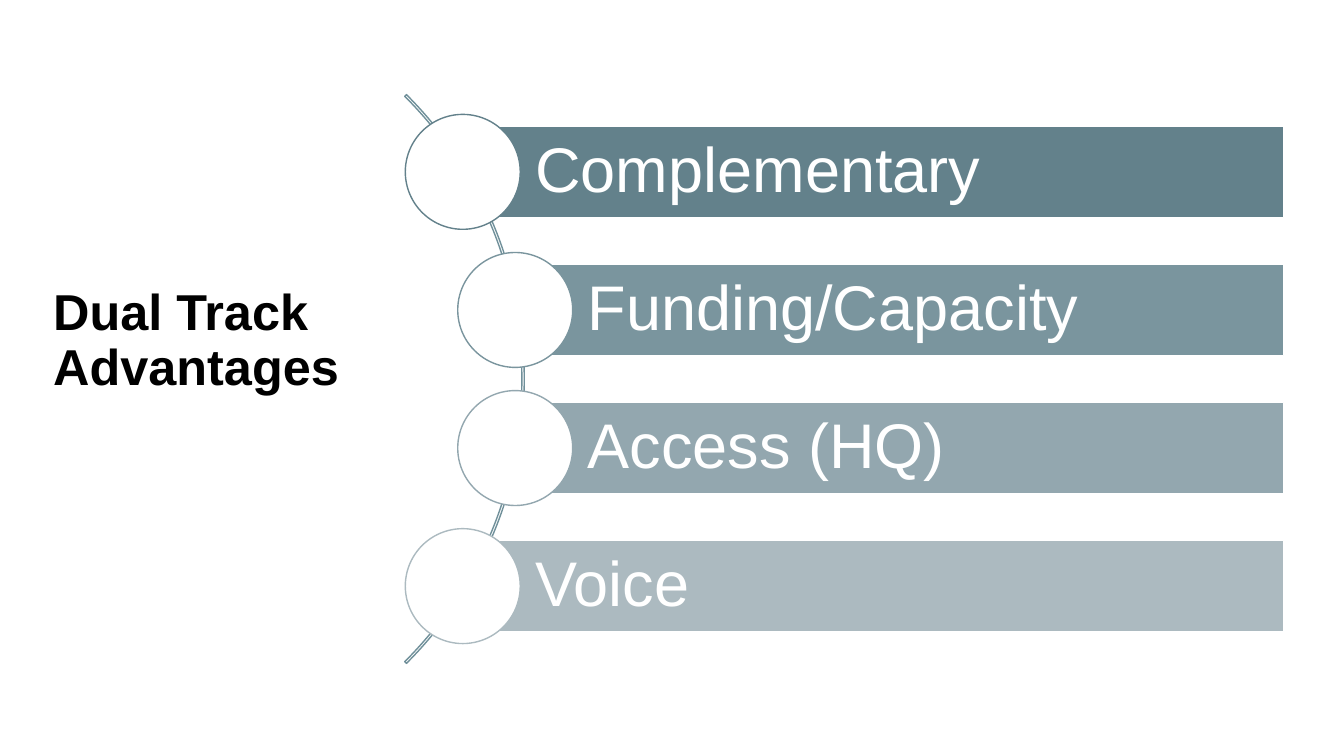
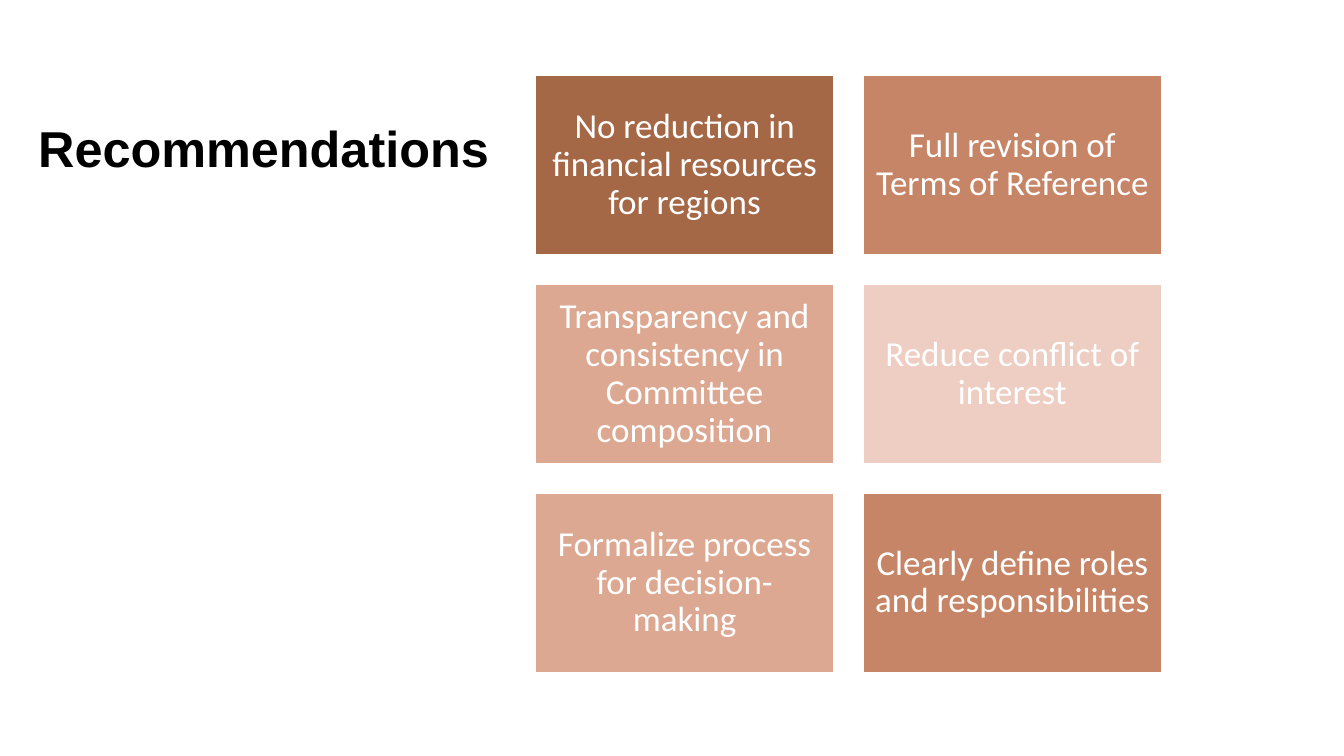
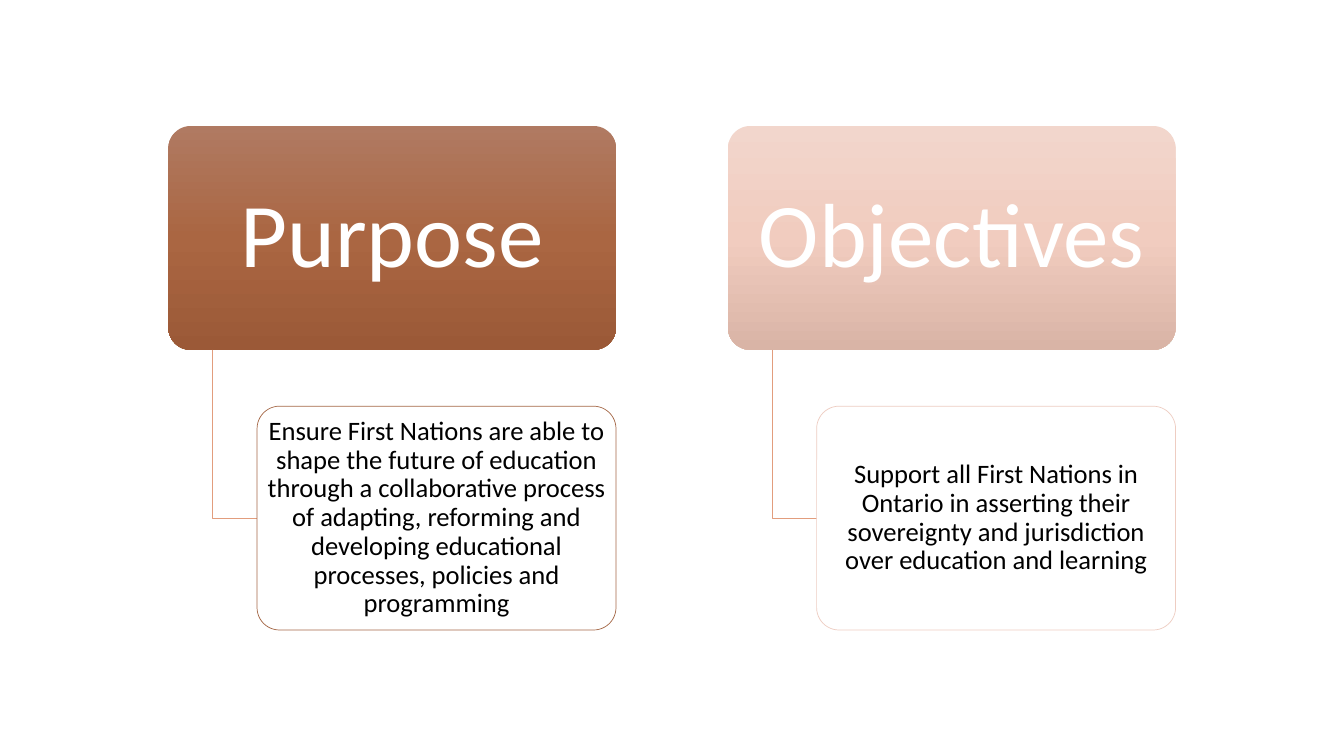
from copy import deepcopy
from dataclasses import dataclass

from pptx import Presentation
from pptx.dml.color import RGBColor
from pptx.enum.shapes import MSO_SHAPE
from pptx.enum.text import MSO_ANCHOR, PP_ALIGN
from pptx.oxml.ns import qn
from pptx.util import Inches, Pt

RECT = MSO_SHAPE.RECTANGLE
ROUND = MSO_SHAPE.ROUNDED_RECTANGLE
OVAL = MSO_SHAPE.OVAL
ARC = MSO_SHAPE.BLOCK_ARC
LEFT, MID = PP_ALIGN.LEFT, PP_ALIGN.CENTER
TOP, HALF = MSO_ANCHOR.TOP, MSO_ANCHOR.MIDDLE


@dataclass(frozen=True)
class Theme:
    white: str = "FFFFFF"
    black: str = "000000"
    arc: str = "70909A"
    slate: tuple = ("63818B", "7A959E", "93A7AF", "ACBAC0")
    clay: tuple = ("A56847", "C68567", "DCA892", "EECDC2")
    dark: tuple = ("B07A62", "AA6642", "9B5937")
    pale: tuple = ("F2D6CC", "F1CCBF", "D9B4A6")
    link: str = "E29D7D"
    sans: str = "Arial"
    body: str = "Calibri"
    title: int = 36
    bar: int = 45
    tile: int = 25
    head: int = 65
    note: int = 19
    space: float = 0.9


class Deck:
    """Holds the theme and the slide being drawn."""

    def __init__(self, theme):
        self.theme = theme
        self.prs = Presentation()
        self.prs.slide_width = Inches(13.33)
        self.prs.slide_height = Inches(7.5)
        self.slide = None

    def page(self):
        self.slide = self.prs.slides.add_slide(self.prs.slide_layouts[6])

    def label(self, shape, text, size, font, color, align=MID, anchor=HALF,
              pad=(0.1, 0.1, 0.1, 0.1), bold=False):
        """Set text in a shape; pad is left, top, right, bottom."""
        frame = shape.text_frame
        frame.word_wrap = True
        frame.vertical_anchor = anchor
        (frame.margin_left, frame.margin_top,
         frame.margin_right, frame.margin_bottom) = map(Inches, pad)
        frame.text = text
        para = frame.paragraphs[0]
        para.alignment = align
        para.line_spacing = self.theme.space
        face = para.runs[0].font
        face.name, face.size, face.bold = font, Pt(size), bold
        face.color.rgb = RGBColor.from_string(color)

    def title(self, text, *box):
        shape = self.slide.shapes.add_textbox(*map(Inches, box))
        self.label(shape, text, self.theme.title, self.theme.sans,
                   self.theme.black, LEFT, TOP, (0.1, 0.05, 0.1, 0.05), True)

    def stroke(self, shape, color, width):
        shape.shadow.inherit = False
        if color:
            shape.line.color.rgb = RGBColor.from_string(color)
            shape.line.width = Pt(width)
        else:
            shape.line.fill.background()

    def shape(self, kind, box, fill=None, line=None, width=1):
        item = self.slide.shapes.add_shape(kind, *map(Inches, box))
        if fill:
            item.fill.solid()
            item.fill.fore_color.rgb = RGBColor.from_string(fill)
        else:
            item.fill.background()
        self.stroke(item, line, width)
        return item

    def blend(self, shape, colors):
        """Fill from top to bottom with three colours."""
        shape.fill.gradient()
        shape.fill.gradient_angle = 270
        first = next(shape._element.iter(qn("a:gs")))
        first.addnext(deepcopy(first))
        for i, (stop, color) in enumerate(zip(shape.fill.gradient_stops, colors)):
            stop.position = i / 2
            stop.color.rgb = RGBColor.from_string(color)

    def elbow(self, *points):
        spots = [(Inches(x), Inches(y)) for x, y in points]
        pen = self.slide.shapes.build_freeform(*spots[0])
        pen.add_line_segments(spots[1:], close=False)
        item = pen.convert_to_shape()
        item.fill.background()
        self.stroke(item, self.theme.link, 0.5)

    def bar(self, text, left, top, color):
        """Bar up to the right edge, with a disc centred on its left end."""
        high, disc, right = 0.91, 1.14, 12.73
        item = self.shape(RECT, (left, top, right - left, high), color,
                          self.theme.white)
        self.label(item, text, self.theme.bar, self.theme.sans,
                   self.theme.white, LEFT, pad=(0.72, 0.12, 0.12, 0.12))
        self.shape(OVAL, (left - disc / 2, top + (high - disc) / 2, disc, disc),
                   self.theme.white, color)

    def tile(self, text, left, top, color):
        item = self.shape(RECT, (left, top, 2.96, 1.78), color, self.theme.white)
        self.label(item, text, self.theme.tile, self.theme.body, self.theme.white)

    def branch(self, head, note, left, colors, edge):
        """Heading card with a note hung below it on an elbow line."""
        top, wide, high, step = 1.25, 4.44, 2.22, 0.44
        low = top + high + 0.56
        card = self.shape(ROUND, (left, top, wide, high))
        card.adjustments[0] = 0.1
        self.blend(card, colors)
        self.label(card, head, self.theme.head, self.theme.body,
                   self.theme.white, pad=(0.14, 0.09, 0.14, 0.09))
        stem, inner = left + step, left + 2 * step
        turn = low + high / 2
        self.elbow((stem, top + high), (stem, turn), (inner, turn))
        leaf = self.shape(ROUND, (inner, low, wide - 2 * step, high),
                          self.theme.white, edge, 0.5)
        leaf.adjustments[0] = 0.1
        self.label(leaf, note, self.theme.note, self.theme.body,
                   self.theme.black, pad=(0.04, 0.03, 0.04, 0.03))


def gains(deck):
    deck.page()
    deck.title("Dual Track Advantages", 0.43, 2.8, 3.87, 2.85)
    arc = deck.shape(ARC, (-2.78, -0.23, 7.98, 7.98), line=deck.theme.arc)
    for i, value in enumerate((189, 27, 3 / 1000)):
        arc.adjustments[i] = value
    texts = ("Complementary", "Funding/Capacity", "Access (HQ)", "Voice")
    lefts = (4.59, 5.11, 5.11, 4.59)
    for i, (text, left) in enumerate(zip(texts, lefts)):
        deck.bar(text, left, 1.25 + 1.37 * i, deck.theme.slate[i])


def advice(deck):
    deck.page()
    deck.title("Recommendations", 0.28, 1.18, 8.67, 0.85)
    tiles = (("No reduction in financial resources for regions", 0),
             ("Full revision of Terms of Reference", 1),
             ("Transparency and consistency in Committee composition", 2),
             ("Reduce conflict of interest", 3),
             ("Formalize process for decision-making", 2),
             ("Clearly define roles and responsibilities", 1))
    for i, (text, tone) in enumerate(tiles):
        row, col = divmod(i, 2)
        deck.tile(text, 5.31 + 3.25 * col, 0.75 + 2.07 * row,
                  deck.theme.clay[tone])


def goals(deck):
    deck.page()
    theme = deck.theme
    deck.branch("Purpose",
                "Ensure First Nations are able to shape the future of education "
                "through a collaborative process of adapting, reforming and "
                "developing educational processes, policies and programming",
                1.67, theme.dark, theme.clay[0])
    deck.branch("Objectives",
                "Support all First Nations in Ontario in asserting their "
                "sovereignty and jurisdiction over education and learning",
                7.22, theme.pale, theme.clay[3])


def main():
    deck = Deck(Theme())
    gains(deck)
    advice(deck)
    goals(deck)
    deck.prs.save("out.pptx")


if __name__ == "__main__":
    main()
